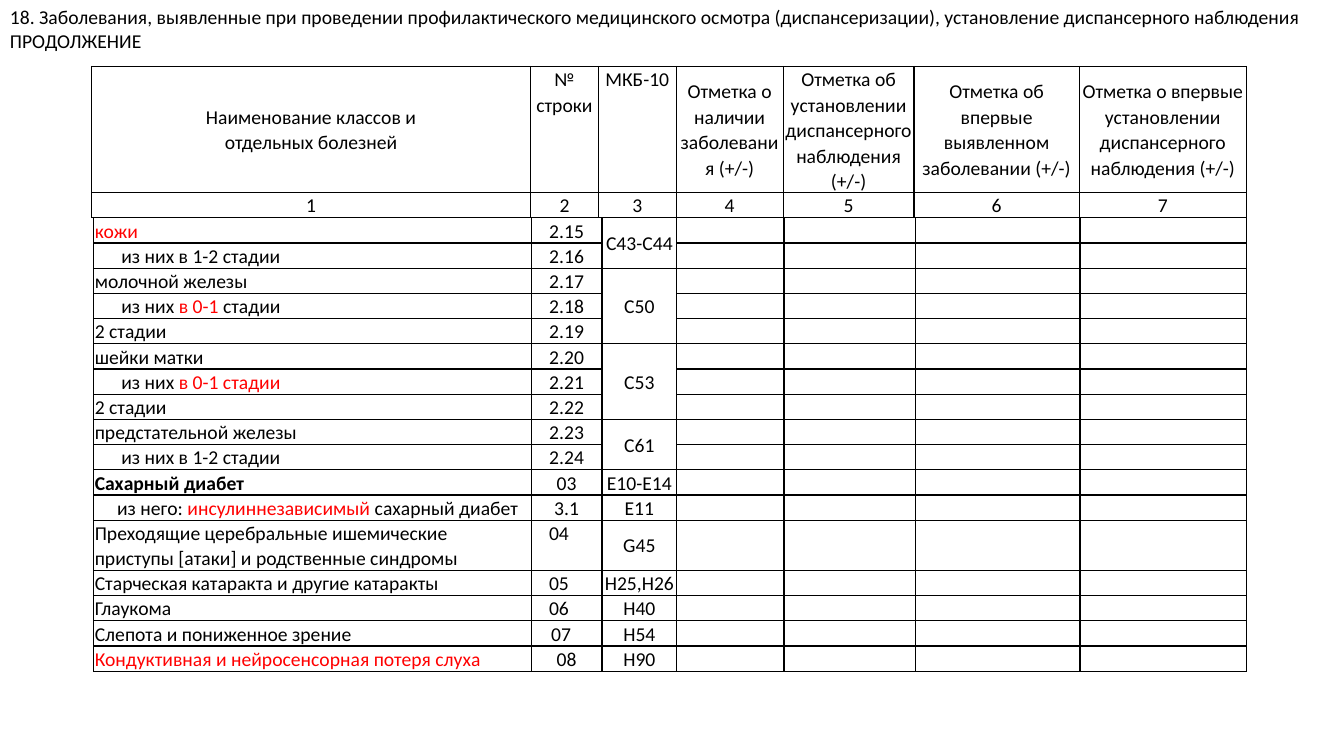
from lxml import etree
from pptx import Presentation
from pptx.dml.color import RGBColor
from pptx.enum import text
from pptx.oxml import ns
from pptx.util import Pt

COLORS = {"ink": "000000", "accent": "FF0000"}
CENTER, LEFT = text.PP_ALIGN.CENTER, text.PP_ALIGN.LEFT
MIDDLE, TOP = text.MSO_ANCHOR.MIDDLE, text.MSO_ANCHOR.TOP

TITLE = ("18. Заболевания, выявленные при проведении профилактического медицинского "
         "осмотра (диспансеризации), установление диспансерного наблюдения ПРОДОЛЖЕНИЕ")

# Paragraphs of each heading, vertical anchor
HEADINGS = [
    (["Наименование классов и", "отдельных болезней"], MIDDLE),
    (["№ строки"], TOP),
    (["МКБ-10"], TOP),
    (["Отметка о наличии заболевания (+/-)"], MIDDLE),
    (["Отметка об установлении диспансерного наблюдения (+/-)"], MIDDLE),
    (["Отметка об впервые выявленном заболевании (+/-)"], MIDDLE),
    (["Отметка о впервые установлении диспансерного наблюдения (+/-)"], MIDDLE),
]

# Label spans (text, look), label indent, line number, number indent (None = centred)
DISEASES = [
    ([("кожи", "accent")], 0, "2.15", None),
    ([("из них в 1-2 стадии", "ink")], 19, "2.16", None),
    ([("молочной железы", "ink")], 0, "2.17", None),
    ([("из них ", "ink"), ("в 0-1 ", "accent"), ("стадии", "ink")], 19, "2.18", None),
    ([("2 стадии", "ink")], 0, "2.19", None),
    ([("шейки матки", "ink")], 0, "2.20", None),
    ([("из них ", "ink"), ("в 0-1 стадии", "accent")], 19, "2.21", None),
    ([("2 стадии", "ink")], 0, "2.22", None),
    ([("предстательной железы", "ink")], 0, "2.23", None),
    ([("из них в 1-2 стадии", "ink")], 19, "2.24", None),
    ([("Сахарный диабет", "bold")], 0, "03", None),
    ([("из него: ", "ink"), ("инсулиннезависимый", "accent"),
      (" сахарный диабет", "ink")], 16, "3.1", None),
    ([("Преходящие церебральные ишемические приступы [атаки] "
       "и родственные синдромы", "ink")], 0, "04", 12),
    ([("Старческая катаракта и другие катаракты", "ink")], 0, "05", 12),
    ([("Глаукома", "ink")], 0, "06", 12),
    ([("Слепота и пониженное зрение", "ink")], 0, "07", 13.5),
    ([("Кондуктивная и нейросенсорная потеря слуха", "accent")], 0, "08", None),
]
TWO_LINE_NUMBER = "04"

# ICD code, number of rows it covers
CODES = [("С43-С44", 2), ("С50", 3), ("С53", 3), ("С61", 2), ("Е10-Е14", 1), ("Е11", 1),
         ("G45", 1), ("Н25,Н26", 1), ("Н40", 1), ("Н54", 1), ("Н90", 1)]


class FormPage:
    font, size, spacing = "Calibri", 14, 1.07
    line_width, row_height = 1, 17.96

    def __init__(self, deck):
        self.page = deck.slides.add_slide(deck.slide_layouts[6])

    def span(self, para, words, look="ink"):
        run = para.add_run()
        run.text = words
        run.font.name, run.font.size = self.font, Pt(self.size)
        run.font.bold = look == "bold"
        run.font.color.rgb = RGBColor.from_string(COLORS.get(look, COLORS["ink"]))

    def title(self, words):
        box = self.page.shapes.add_textbox(Pt(0), Pt(0), Pt(960), Pt(41))
        box.text_frame.word_wrap = True
        box.text_frame.auto_size = text.MSO_AUTO_SIZE.SHAPE_TO_FIT_TEXT
        self.span(box.text_frame.paragraphs[0], words)

    def table(self, left, top, widths, heights):
        """Add a ruled, unfilled table whose empty cells keep the text size."""
        frame = self.page.shapes.add_table(len(heights), len(widths), Pt(left), Pt(top),
                                           Pt(sum(widths)), Pt(sum(heights)))
        grid = frame.table
        grid.first_row = grid.horz_banding = False
        for column, width in zip(grid.columns, widths):
            column.width = Pt(width)
        for row, height in zip(grid.rows, heights):
            row.height = Pt(height)
            for cell in row.cells:
                self.rule(cell)
        return grid

    def rule(self, cell):
        """Set a cell's margins, borders, empty fill and empty-text size."""
        cell.margin_left = cell.margin_right = Pt(0.7)
        cell.margin_top = cell.margin_bottom = Pt(0)
        properties = cell._tc.get_or_add_tcPr()
        for side in ("a:lnL", "a:lnR", "a:lnT", "a:lnB"):
            line = etree.SubElement(properties, ns.qn(side), w=str(Pt(self.line_width)))
            fill = etree.SubElement(line, ns.qn("a:solidFill"))
            etree.SubElement(fill, ns.qn("a:srgbClr"), val=COLORS["ink"])
        cell.fill.background()
        para = cell.text_frame.paragraphs[0]
        para.line_spacing = self.spacing
        etree.SubElement(para._p, ns.qn("a:endParaRPr"), sz=str(self.size * 100))

    def fill_cell(self, cell, paragraphs, align=CENTER, anchor=MIDDLE, indent=0):
        """Fill a cell; each paragraph is a list of (text, look) spans."""
        cell.vertical_anchor = anchor
        frame = cell.text_frame
        for index, spans in enumerate(paragraphs):
            para = frame.add_paragraph() if index else frame.paragraphs[0]
            para.alignment, para.line_spacing = align, self.spacing
            if indent:
                para._p.get_or_add_pPr().set("marL", str(Pt(indent)))
            for words, look in spans:
                self.span(para, words, look)

    def header_table(self):
        grid = self.table(65.5, 47.5, [313.5, 48.5, 55.5, 76.5, 93.5, 118, 119.5],
                          [90, self.row_height])
        for column, (lines, anchor) in enumerate(HEADINGS):
            self.fill_cell(grid.cell(0, column), [[(line, "ink")] for line in lines],
                           anchor=anchor)
            self.fill_cell(grid.cell(1, column), [[(str(column + 1), "ink")]])

    def disease_table(self):
        heights = [self.row_height * (2 if number == TWO_LINE_NUMBER else 1)
                   for _, _, number, _ in DISEASES]
        grid = self.table(67, 155.5, [312.5, 50.5, 53.5, 76.5, 94, 117.5, 119], heights)
        for row, (label, indent, number, number_indent) in enumerate(DISEASES):
            self.fill_cell(grid.cell(row, 0), [label], LEFT, TOP, indent)
            placing = (CENTER, MIDDLE) if number_indent is None else (LEFT, TOP, number_indent)
            self.fill_cell(grid.cell(row, 1), [[(number, "ink")]], *placing)
        row = 0
        for code, covered in CODES:
            cell = grid.cell(row, 2)
            if covered > 1:
                cell.merge(grid.cell(row + covered - 1, 2))
            self.fill_cell(cell, [[(code, "ink")]])
            row += covered


def main():
    deck = Presentation()
    deck.slide_width, deck.slide_height = Pt(960), Pt(540)
    form = FormPage(deck)
    form.title(TITLE)
    form.disease_table()
    form.header_table()
    deck.save("out.pptx")


if __name__ == "__main__":
    main()
